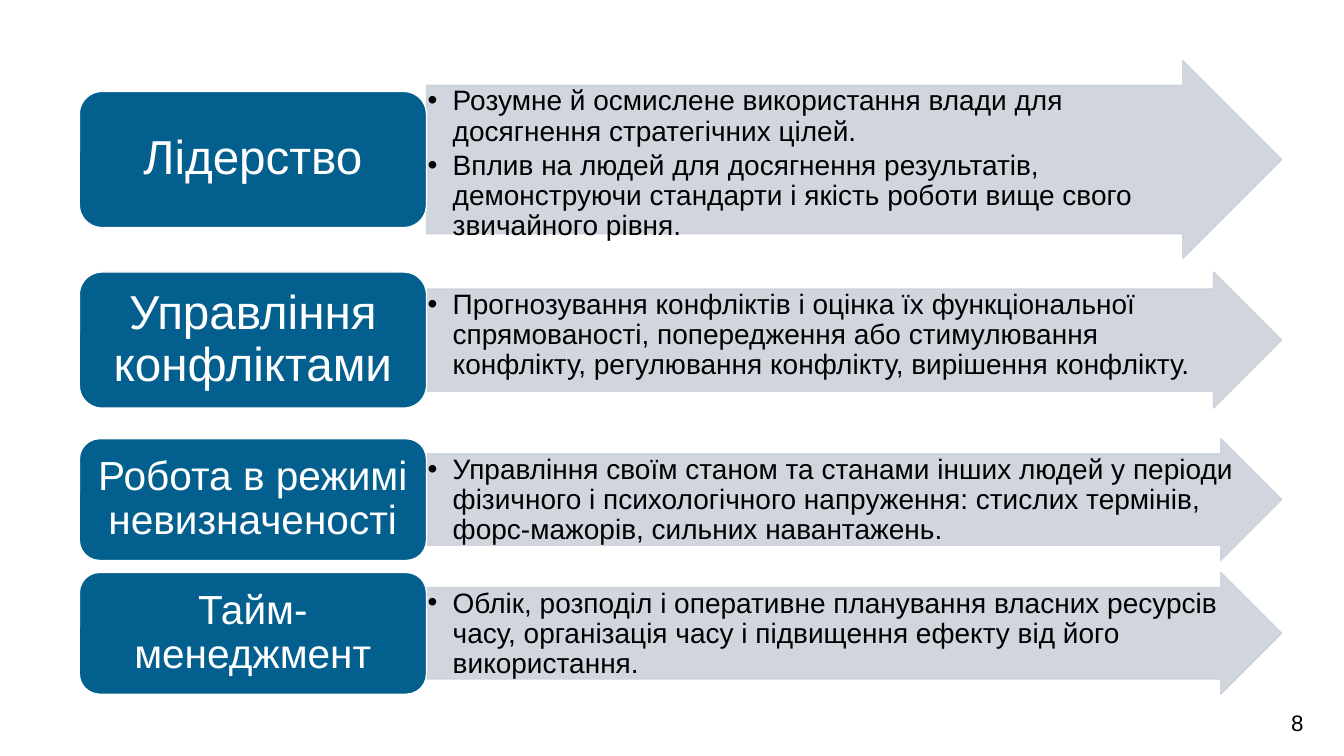
from dataclasses import dataclass

from lxml.etree import SubElement
from pptx import Presentation
from pptx.dml.color import RGBColor
from pptx.enum.shapes import MSO_SHAPE as Shape
from pptx.enum.text import MSO_ANCHOR as Anchor, PP_ALIGN as Align
from pptx.oxml.ns import qn
from pptx.util import Cm, Pt


@dataclass(frozen=True)
class Theme:
    font: str = "Arial"
    label_fill: RGBColor = RGBColor(0x03, 0x5F, 0x8E)
    arrow_fill: RGBColor = RGBColor(0xCC, 0xD2, 0xDB)
    light: RGBColor = RGBColor(0xFF, 0xFF, 0xFF)
    dark: RGBColor = RGBColor(0, 0, 0)
    arrow_opacity: int = 90
    body_size: int = 20
    number_size: int = 16
    large_label: int = 34
    small_label: int = 29


THEME = Theme()
LABEL_LEFT, LABEL_WIDTH, ARROW_WIDTH = 2, 8.75, 21.55

# Label, label size, row centre, label height, arrow height (cm), bullets
ROWS = [
    ("Лідерство", THEME.large_label, 4.02, 3.43, 4.98, [
        "Розумне й осмислене використання влади для досягнення стратегічних цілей.",
        "Вплив на людей для досягнення результатів, демонструючи стандарти "
        "і якість роботи вище свого звичайного рівня."]),
    ("Управління конфліктами", THEME.large_label, 8.57, 3.43, 3.43, [
        "Прогнозування конфліктів і оцінка їх функціональної спрямованості, "
        "попередження або стимулювання конфлікту, регулювання конфлікту, "
        "вирішення конфлікту."]),
    ("Робота в режимі невизначеності", THEME.small_label, 12.59, 3.07, 3.07, [
        "Управління своїм станом та станами інших людей у періоди фізичного "
        "і психологічного напруження: стислих термінів, форс-мажорів, "
        "сильних навантажень."]),
    ("Тайм-менеджмент", THEME.small_label, 15.96, 3.07, 3.07, [
        "Облік, розподіл і оперативне планування власних ресурсів часу, "
        "організація часу і підвищення ефекту від його використання."]),
]


def set_margins(frame, horizontal, vertical):
    frame.word_wrap = True
    frame.margin_left = frame.margin_right = Cm(horizontal)
    frame.margin_top = frame.margin_bottom = Cm(vertical)


def style_text(paragraph, size, color, align):
    paragraph.alignment = align
    for run in paragraph.runs:
        run.font.name = THEME.font
        run.font.size = Pt(size)
        run.font.color.rgb = color


def add_bullet(paragraph):
    properties = paragraph._p.get_or_add_pPr()
    properties.set("marL", str(Cm(0.63)))
    properties.set("indent", str(Cm(-0.63)))
    SubElement(properties, qn("a:buFont"), typeface=THEME.font)
    SubElement(properties, qn("a:buChar"), char="•")


def add_panel(slide, kind, left, centre, width, height, fill, line):
    shape = slide.shapes.add_shape(
        kind, Cm(left), Cm(centre - height / 2), Cm(width), Cm(height))
    shape.shadow.inherit = False
    shape.fill.solid()
    shape.fill.fore_color.rgb = fill
    shape.line.color.rgb = line
    shape.line.width = Pt(1)
    return shape


def add_arrow(slide, centre, height, bullets):
    shape = add_panel(slide, Shape.RIGHT_ARROW, LABEL_LEFT + LABEL_WIDTH, centre,
                      ARROW_WIDTH, height, THEME.arrow_fill, THEME.arrow_fill)
    shape.adjustments[0] = 0.75
    shape.adjustments[1] = 0.5
    # Translucent fill and outline
    for color in shape._element.spPr.iter(qn("a:srgbClr")):
        SubElement(color, qn("a:alpha"), val=str(THEME.arrow_opacity * 1000))
    frame = shape.text_frame
    set_margins(frame, 0.03, 0.03)
    frame.vertical_anchor = Anchor.TOP
    frame.text = "\n".join(bullets)
    for paragraph in frame.paragraphs:
        add_bullet(paragraph)
        paragraph.line_spacing = 0.9
        paragraph.space_after = Pt(3)
        style_text(paragraph, THEME.body_size, THEME.dark, Align.LEFT)


def add_label(slide, text, size, centre, height):
    shape = add_panel(slide, Shape.ROUNDED_RECTANGLE, LABEL_LEFT, centre,
                      LABEL_WIDTH, height, THEME.label_fill, THEME.light)
    frame = shape.text_frame
    set_margins(frame, size / 100, size / 200)
    frame.vertical_anchor = Anchor.MIDDLE
    frame.text = text
    frame.paragraphs[0].line_spacing = 0.9
    style_text(frame.paragraphs[0], size, THEME.light, Align.CENTER)


def add_slide_number(slide, number):
    box = slide.shapes.add_textbox(Cm(31.88), Cm(17.75), Cm(1.63), Cm(0.94))
    frame = box.text_frame
    frame.word_wrap = True
    frame.text = number
    style_text(frame.paragraphs[0], THEME.number_size, THEME.dark, Align.CENTER)


def main():
    presentation = Presentation()
    presentation.slide_width = Cm(33.87)
    presentation.slide_height = Cm(19.05)
    slide = presentation.slides.add_slide(presentation.slide_layouts[6])

    # Competence rows: arrow behind, label in front
    for text, size, centre, label_height, arrow_height, bullets in ROWS:
        add_arrow(slide, centre, arrow_height, bullets)
        add_label(slide, text, size, centre, label_height)

    add_slide_number(slide, "8")
    presentation.save("out.pptx")


if __name__ == "__main__":
    main()
